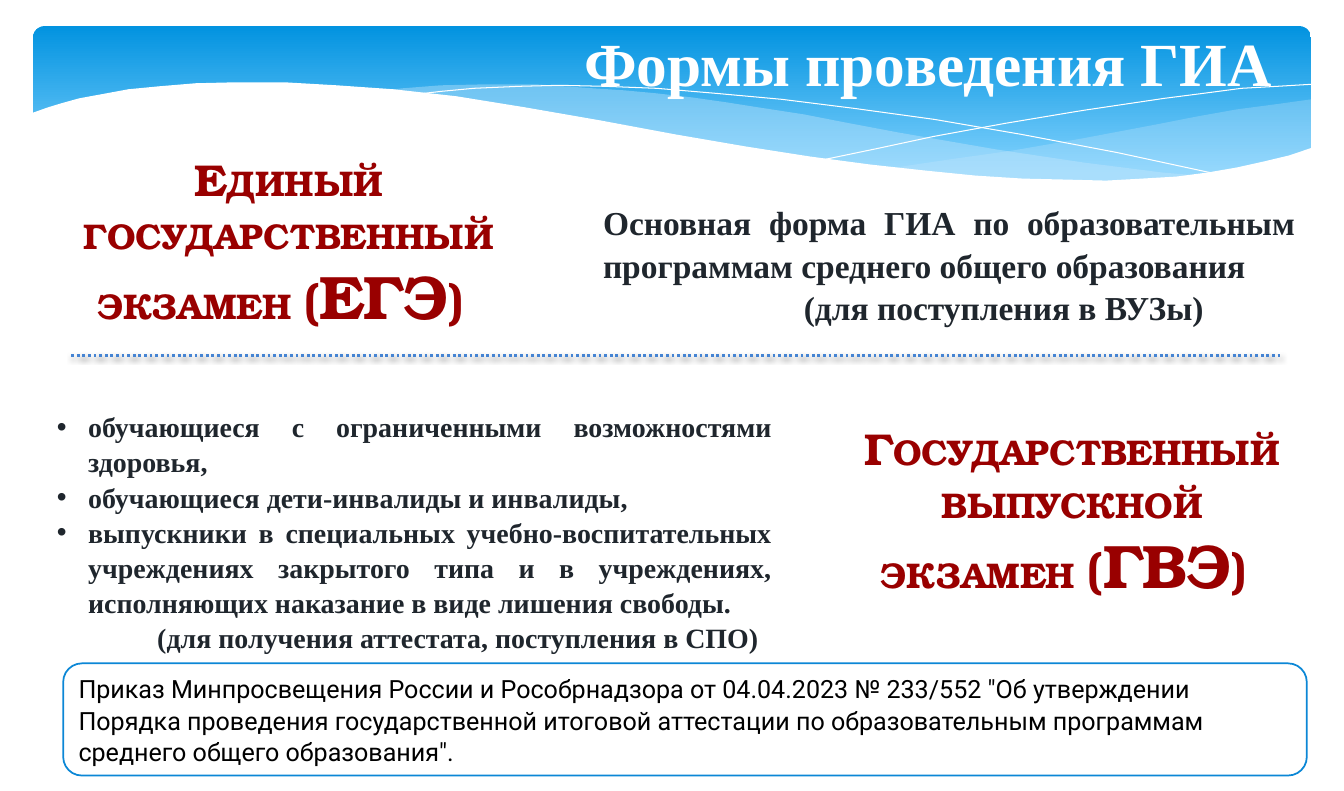
from lxml import etree
from pptx import Presentation
from pptx.dml.color import RGBColor
from pptx.enum.dml import MSO_LINE
from pptx.enum.shapes import MSO_CONNECTOR, MSO_SHAPE
from pptx.enum.text import MSO_ANCHOR, PP_ALIGN
from pptx.oxml.ns import qn
from pptx.util import Cm, Pt

LEFT, CENTER, JUSTIFY = PP_ALIGN.LEFT, PP_ALIGN.CENTER, PP_ALIGN.JUSTIFY
TOP, MIDDLE = MSO_ANCHOR.TOP, MSO_ANCHOR.MIDDLE
ROUNDED, STRAIGHT = MSO_SHAPE.ROUNDED_RECTANGLE, MSO_CONNECTOR.STRAIGHT
DOTTED = MSO_LINE.ROUND_DOT
SERIF, BOOK, SANS = "Times New Roman", "TeX Gyre Bonum", "Roboto"
COLORS = {
    "white": "FFFFFF", "black": "000000", "ink": "1F262D", "exam": "990000",
    "band top": "0293E0", "band bottom": "83D3FE", "wave": "C6E7FC",
    "divider": "4584D3", "frame": "0B87D6",
}
WAVE_UNIT = Cm(2.54) / 100


def color(name):
    return RGBColor.from_string(COLORS[name])


def write(frame, paragraphs, font, ink, bold=True, align=LEFT, anchor=TOP, spacing=1):
    frame.word_wrap = True
    frame.vertical_anchor = anchor
    for index, (margin, bullet, runs) in enumerate(paragraphs):
        para = frame.paragraphs[0] if index == 0 else frame.add_paragraph()
        para.alignment = align
        para.line_spacing = spacing
        properties = para._p.get_or_add_pPr()
        properties.set("marL", str(Cm(margin)))
        properties.set("indent", str(-Cm(margin) if bullet else 0))
        if bullet:
            etree.SubElement(properties, qn("a:buFont")).set("typeface", "Arial")
            etree.SubElement(properties, qn("a:buChar")).set("char", bullet)
        for text, size, small_caps in runs:
            span = para.add_run()
            span.text = text
            span.font.name = font
            span.font.size = Pt(size)
            span.font.bold = bold
            span.font.color.rgb = color(ink)
            if small_caps:
                span.font._element.set("cap", "small")


deck = Presentation()
deck.slide_width, deck.slide_height = Cm(34.01), Cm(20.02)
page = deck.slides.add_slide(deck.slide_layouts[6])
shapes = page.shapes

band = shapes.add_shape(ROUNDED, Cm(0.84), Cm(0.66), Cm(32.33), Cm(4.17))
band.adjustments[0] = 0.07
band.shadow.inherit = False
band.line.fill.background()
band.fill.gradient()
band.fill.gradient_angle = 270
for stop, position, name in zip(band.fill.gradient_stops, (0, 0.9), ("band top", "band bottom")):
    stop.position = position
    stop.color.rgb = color(name)

right_wave = [
    (1306, 99), (1270, 104), (1232, 109), (1193, 116), (1152, 124), (1078, 138),
    (1009, 150), (945, 159), (885, 168), (925, 172), (962, 175), (997, 178),
    (1029, 180), (1075, 181), (1117, 180), (1155, 178), (1190, 175), (1222, 170),
    (1252, 164), (1289, 154), (1306, 149),
]
middle_wave = [
    (1195, 175), (1159, 172), (1080, 162), (993, 149), (895, 132), (842, 122),
    (801, 114), (762, 108), (724, 102), (689, 97), (654, 93), (622, 90), (591, 88),
    (534, 84), (484, 84), (439, 85), (401, 88), (383, 90), (432, 95), (485, 102),
    (541, 111), (602, 122), (709, 142), (782, 154), (849, 163), (911, 171),
    (967, 176), (1018, 180), (1066, 182), (1109, 181), (1148, 180), (1172, 178),
]
falling_line = [
    (414, 94), (440, 91), (472, 88), (518, 86), (557, 85), (602, 86), (654, 88),
    (713, 93), (779, 99), (851, 108), (931, 119), (1018, 134), (1113, 152), (1215, 174),
]
rising_line = [
    (821, 159), (874, 148), (930, 136), (1001, 123), (1079, 110), (1160, 98),
    (1199, 93), (1237, 88), (1273, 86), (1306, 84),
]
white_wave = [
    (1308, 147), (1284, 155), (1259, 161), (1232, 167), (1203, 172), (1172, 176),
    (1138, 178), (1102, 180), (1062, 179), (1019, 178), (972, 175), (922, 170),
    (867, 164), (807, 156), (743, 146), (673, 134), (598, 120), (523, 107),
    (455, 96), (392, 89), (335, 85), (283, 82), (236, 82), (195, 83), (159, 86),
    (128, 89), (101, 94), (79, 98), (61, 103), (48, 107), (31, 113), (31, 235), (1308, 235),
]
waves = [
    (right_wave, "wave", 29), (middle_wave, "wave", 40),
    (falling_line, None, 100), (rising_line, None, 100), (white_wave, "white", 100),
]
for points, fill, opacity in waves:
    builder = shapes.build_freeform(*points[0], scale=WAVE_UNIT)
    builder.add_line_segments(points[1:], close=fill is not None)
    wave = builder.convert_to_shape()
    wave.shadow.inherit = False
    if fill is None:
        wave.fill.background()
        wave.line.color.rgb = color("white")
        wave.line.width = Pt(0)
    else:
        wave.line.fill.background()
        wave.fill.solid()
        wave.fill.fore_color.rgb = color(fill)
        if opacity < 100:
            tint = wave._element.spPr.find(qn("a:solidFill"))[0]
            etree.SubElement(tint, qn("a:alpha")).set("val", str(opacity * 1000))

title = shapes.add_textbox(Cm(14.2), Cm(0.41), Cm(18.59), Cm(2.21))
title.text_frame.margin_bottom = 0
write(title.text_frame, [(0, None, [("Формы проведения ГИА", 44, False)])],
      SERIF, "white", align=CENTER, anchor=MIDDLE)

exams = [
    (1.8, 3.71, 11.02, "Единый государственный экзамен ", "(ЕГЭ) "),
    (21.23, 10.52, 11.81, "Государственный выпускной экзамен ", "(ГВЭ) "),
]
for left, top, width, name, short_name in exams:
    box = shapes.add_textbox(Cm(left), Cm(top), Cm(width), Cm(5.64))
    write(box.text_frame, [(0, None, [(name, 32, True), (short_name, 44, True)])],
          BOOK, "exam", align=CENTER)

main_form = [
    (0, None, "Основная форма ГИА по образовательным программам среднего общего образования"),
    (5.08, None, "(для поступления в ВУЗы) "),
]
categories = [
    (0.79, "•", "обучающиеся с ограниченными возможностями здоровья,"),
    (0.79, "•", "обучающиеся дети-инвалиды и инвалиды,"),
    (0.79, "•", "выпускники в специальных учебно-воспитательных учреждениях закрытого типа "
                "и в учреждениях, исполняющих наказание в виде лишения свободы. "),
    (2.54, None, "(для получения аттестата, поступления в СПО)"),
]
descriptions = [
    (15.01, 4.95, 18.01, 3.33, 24, main_form),
    (1.19, 10.21, 18.59, 6.25, 20, categories),
]
for left, top, width, height, size, lines in descriptions:
    box = shapes.add_textbox(Cm(left), Cm(top), Cm(width), Cm(height))
    paragraphs = [(margin, bullet, [(text, size, False)]) for margin, bullet, text in lines]
    write(box.text_frame, paragraphs, SERIF, "ink", align=JUSTIFY, spacing=1.05)

divider = shapes.add_connector(STRAIGHT, Cm(1.8), Cm(8.99), Cm(32.41), Cm(8.99))
divider.line.color.rgb = color("divider")
divider.line.width = Pt(2)
divider.line.dash_style = DOTTED
effects = etree.SubElement(divider._element.spPr, qn("a:effectLst"))
shadow = etree.SubElement(effects, qn("a:outerShdw"), blurRad=str(Pt(4)), dist=str(Pt(2)),
                          dir="5400000", rotWithShape="0")
shade = etree.SubElement(shadow, qn("a:srgbClr"), val=COLORS["black"])
etree.SubElement(shade, qn("a:alpha"), val="38000")

order = shapes.add_shape(ROUNDED, Cm(1.6), Cm(16.79), Cm(31.47), Cm(2.84))
order.shadow.inherit = False
order.fill.solid()
order.fill.fore_color.rgb = color("white")
order.line.color.rgb = color("frame")
order.line.width = Pt(1.25)
order_text = ('Приказ Минпросвещения России и Рособрнадзора от 04.04.2023 № 233/552 "Об утверждении '
              'Порядка проведения государственной итоговой аттестации по образовательным программам '
              'среднего общего образования".')
write(order.text_frame, [(0, None, [(order_text, 18, False)])],
      SANS, "black", bold=False, anchor=MIDDLE, spacing=1.05)

deck.save("out.pptx")
